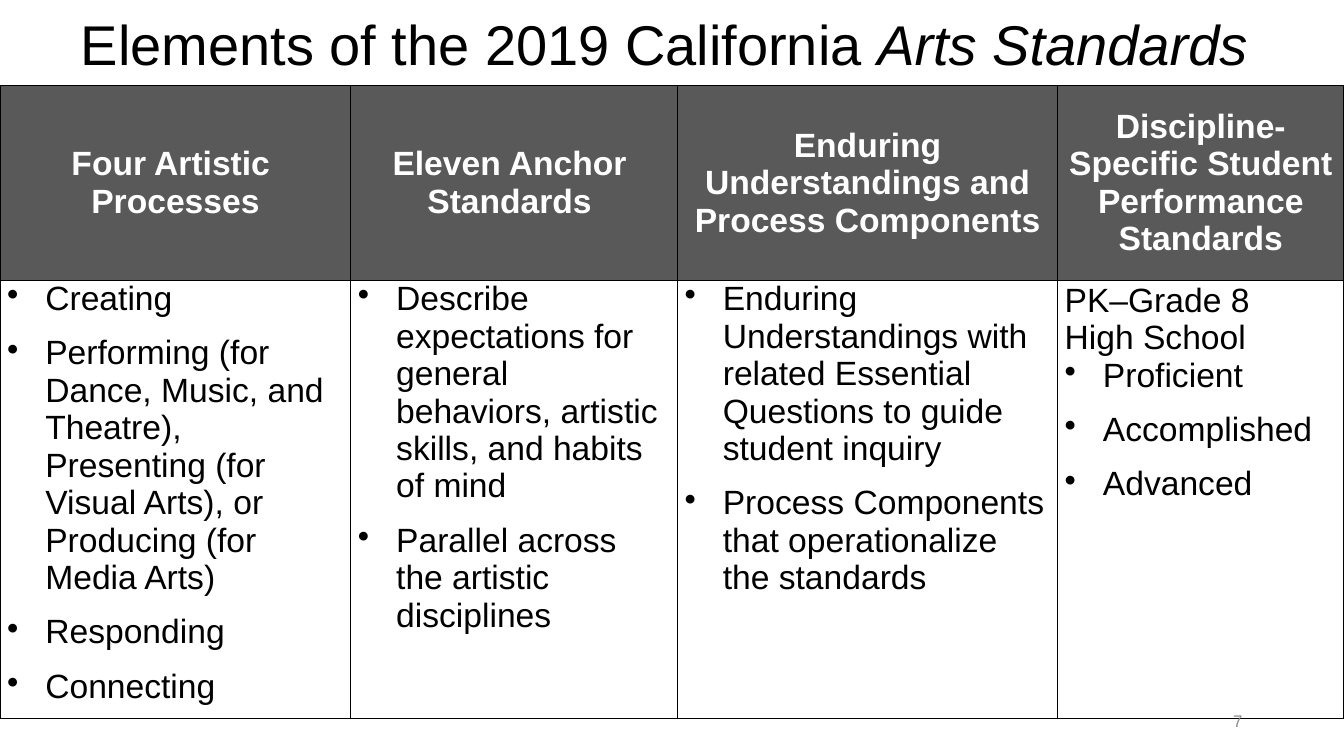
"""Build the slide on the elements of the 2019 California Arts Standards."""
import pptx
import pptx.dml.color
import pptx.enum.text
import pptx.oxml
import pptx.oxml.ns
import pptx.util

Inches, Pt = pptx.util.Inches, pptx.util.Pt
PP_ALIGN = pptx.enum.text.PP_ALIGN
MIDDLE = pptx.enum.text.MSO_ANCHOR.MIDDLE
COLORS = {"black": "000000", "white": "FFFFFF", "header": "595959", "number": "8C8C8C"}
COL_WIDTHS = [3.48, 3.24, 3.77, 2.84]
ROW_HEIGHTS = [1.93, 4.35]
HEADERS = [
    ["Four Artistic ", "Processes"],
    ["Eleven Anchor ", "Standards "],
    ["Enduring Understandings and Process Components"],
    ["Discipline-Specific Student Performance Standards"],
]
PLAIN = ["PK–Grade 8", "High School"]
BODIES = [
    ["Creating",
     "Performing (for Dance, Music, and Theatre), Presenting (for Visual Arts), "
     "or Producing (for Media Arts)",
     "Responding",
     "Connecting"],
    ["Describe expectations for general behaviors, artistic skills, and habits of mind",
     "Parallel across the artistic disciplines"],
    ["Enduring Understandings with related Essential Questions to guide student inquiry",
     "Process Components that operationalize the standards"],
    PLAIN + ["Proficient", "Accomplished", "Advanced"],
]


def add_run(p, text, size, color, bold=False, italic=False):
    r = p.add_run()
    r.text = text
    r.font.name = "Arial"
    r.font.size = Pt(size)
    r.font.bold = bold
    r.font.italic = italic
    r.font.color.rgb = pptx.dml.color.RGBColor.from_string(COLORS[color])


def style_cell(cell, fill):
    cell.margin_left = cell.margin_right = Inches(0.07)
    cell.margin_top = cell.margin_bottom = 0
    cell.fill.solid()
    cell.fill.fore_color.rgb = pptx.dml.color.RGBColor.from_string(COLORS[fill])
    tcPr = cell._tc.get_or_add_tcPr()
    for i, side in enumerate(["lnL", "lnR", "lnT", "lnB"]):
        tcPr.insert(i, pptx.oxml.parse_xml(
            f'<a:{side} {pptx.oxml.ns.nsdecls("a")} w="{Pt(1)}"><a:solidFill>'
            f'<a:srgbClr val="{COLORS["black"]}"/></a:solidFill></a:{side}>'))


prs = pptx.Presentation()
prs.slide_width, prs.slide_height = Inches(13.33), Inches(7.5)
s = prs.slides.add_slide(prs.slide_layouts[5])

title = s.shapes.title
title.left, title.top = Inches(0), Inches(-0.25)
title.width, title.height = Inches(13.33), Inches(1.45)
tf = title.text_frame
tf.vertical_anchor = MIDDLE
tf.auto_size = pptx.enum.text.MSO_AUTO_SIZE.NONE
p = tf.paragraphs[0]
p.alignment = PP_ALIGN.CENTER
p.line_spacing = 0.9
add_run(p, "Elements of the 2019 California ", 40, "black")
add_run(p, "Arts Standards ", 40, "black", italic=True)

table = s.shapes.add_table(2, 4, Inches(0), Inches(0.85), Inches(13.33),
                           Inches(sum(ROW_HEIGHTS))).table
table.first_row = table.horz_banding = False
for row, height in zip(table.rows, ROW_HEIGHTS):
    row.height = Inches(height)

for col, width in enumerate(COL_WIDTHS):
    table.columns[col].width = Inches(width)

    head = table.cell(0, col)
    style_cell(head, "header")
    head.vertical_anchor = MIDDLE
    p = head.text_frame.paragraphs[0]
    p.alignment = PP_ALIGN.CENTER
    if col == 3:
        p.space_before = Pt(3)
    for i, line in enumerate(HEADERS[col]):
        if i:
            p.add_line_break()
        add_run(p, line, 24, "white", bold=True)

    body = table.cell(1, col)
    style_cell(body, "white")
    tf = body.text_frame
    for i, text in enumerate(BODIES[col]):
        p = tf.add_paragraph() if i else tf.paragraphs[0]
        add_run(p, text, 24, "black")
        if text == PLAIN[0]:
            p.line_spacing = 1.05
        if text not in PLAIN:
            p.space_after = Pt(12)
            pPr = p._p.get_or_add_pPr()
            pPr.set("marL", str(Inches(0.38)))
            pPr.set("indent", str(-Inches(0.38)))
            pPr.append(pptx.oxml.parse_xml(
                f'<a:buChar {pptx.oxml.ns.nsdecls("a")} char="•"/>'))

number = s.shapes.add_textbox(Inches(9.42), Inches(6.95), Inches(3), Inches(0.4))
tf = number.text_frame
tf.word_wrap = True
tf.vertical_anchor = MIDDLE
p = tf.paragraphs[0]
p.alignment = PP_ALIGN.RIGHT
add_run(p, "7", 12, "number")

prs.save("out.pptx")
